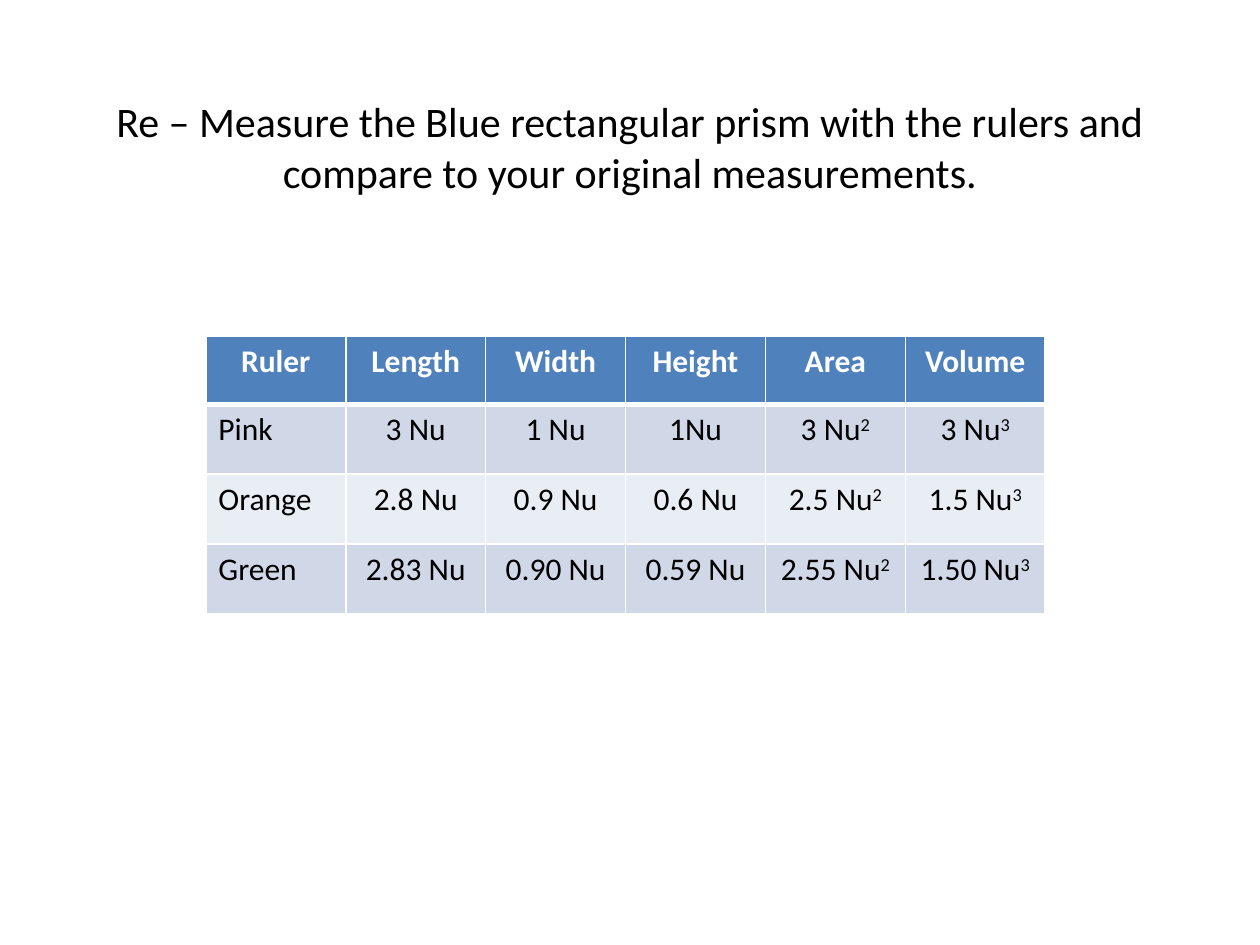
from lxml.etree import SubElement
from pptx import Presentation
from pptx.dml.color import RGBColor
from pptx.enum.text import MSO_ANCHOR, MSO_AUTO_SIZE, PP_ALIGN
from pptx.oxml.ns import qn
from pptx.util import Cm, Pt

# Content: a cell is text, or text with its exponent
HEADING = ("Re – Measure the Blue rectangular prism with the rulers "
           "and compare to your original measurements.")
MEASUREMENTS = [
    ["Ruler", "Length", "Width", "Height", "Area", "Volume"],
    ["Pink", "3 Nu", "1 Nu", "1Nu", ("3 Nu", "2"), ("3 Nu", "3")],
    ["Orange", "2.8 Nu", "0.9 Nu", "0.6 Nu", ("2.5 Nu", "2"), ("1.5 Nu", "3")],
    ["Green", "2.83 Nu", "0.90 Nu", "0.59 Nu", ("2.55 Nu", "2"), ("1.50 Nu", "3")],
]

# Style
FONT = "Calibri"
WHITE, BLACK = "FFFFFF", "000000"
HEADER_FILL, BAND_FILLS = "4F81BD", ("E9EDF4", "D0D8E8")
COLUMN_WIDTH, HEADER_HEIGHT, ROW_HEIGHT = Cm(2.82), Cm(1.38), Cm(1.41)
THIN, THICK = Pt(1), Pt(3)


def color(hex_code):
    return RGBColor.from_string(hex_code)


def add_run(paragraph, text, size, hex_code, bold=False, raised=False):
    run = paragraph.add_run()
    run.text = text
    run.font.name = FONT
    run.font.size = Pt(size)
    run.font.bold = bold
    run.font.color.rgb = color(hex_code)
    if raised:
        run.font._element.set("baseline", "30000")


def set_borders(cell, top, bottom):
    properties = cell._tc.get_or_add_tcPr()
    sides = {"lnL": THIN, "lnR": THIN, "lnT": top, "lnB": bottom}
    for side, width in sides.items():
        line = SubElement(properties, qn(f"a:{side}"), w=str(int(width)))
        fill = SubElement(line, qn("a:solidFill"))
        SubElement(fill, qn("a:srgbClr"), val=WHITE)


def fill_cell(cell, content, row, column):
    header = row == 0
    set_borders(cell, THICK if row == 1 else THIN, THICK if header else THIN)
    cell.fill.solid()
    cell.fill.fore_color.rgb = color(HEADER_FILL if header else BAND_FILLS[row % 2])
    paragraph = cell.text_frame.paragraphs[0]
    left_aligned = column == 0 and not header
    paragraph.alignment = PP_ALIGN.LEFT if left_aligned else PP_ALIGN.CENTER
    parts = (content,) if isinstance(content, str) else content
    for index, part in enumerate(parts):
        add_run(paragraph, part, 18, WHITE if header else BLACK, header, index > 0)


def add_heading(slide):
    heading = slide.shapes.title
    heading.left, heading.top = Cm(1.3), Cm(1.8)
    heading.width, heading.height = Cm(22.8), Cm(2.31)
    frame = heading.text_frame
    frame.word_wrap = True
    frame.auto_size = MSO_AUTO_SIZE.SHAPE_TO_FIT_TEXT
    frame.vertical_anchor = MSO_ANCHOR.TOP
    frame.paragraphs[0].alignment = PP_ALIGN.CENTER
    add_run(frame.paragraphs[0], HEADING, 24, BLACK)


def add_measurements(slide):
    row_count, column_count = len(MEASUREMENTS), len(MEASUREMENTS[0])
    table = slide.shapes.add_table(
        row_count, column_count, Cm(4.15), Cm(6.77), COLUMN_WIDTH * column_count,
        HEADER_HEIGHT + ROW_HEIGHT * (row_count - 1)).table
    for table_column in table.columns:
        table_column.width = COLUMN_WIDTH
    for row, contents in enumerate(MEASUREMENTS):
        table.rows[row].height = ROW_HEIGHT if row else HEADER_HEIGHT
        for column, content in enumerate(contents):
            fill_cell(table.cell(row, column), content, row, column)


def main():
    deck = Presentation()
    deck.slide_width, deck.slide_height = Cm(25.4), Cm(19.05)
    slide = deck.slides.add_slide(deck.slide_layouts.get_by_name("Title Only"))
    add_measurements(slide)
    add_heading(slide)
    deck.save("out.pptx")


if __name__ == "__main__":
    main()
